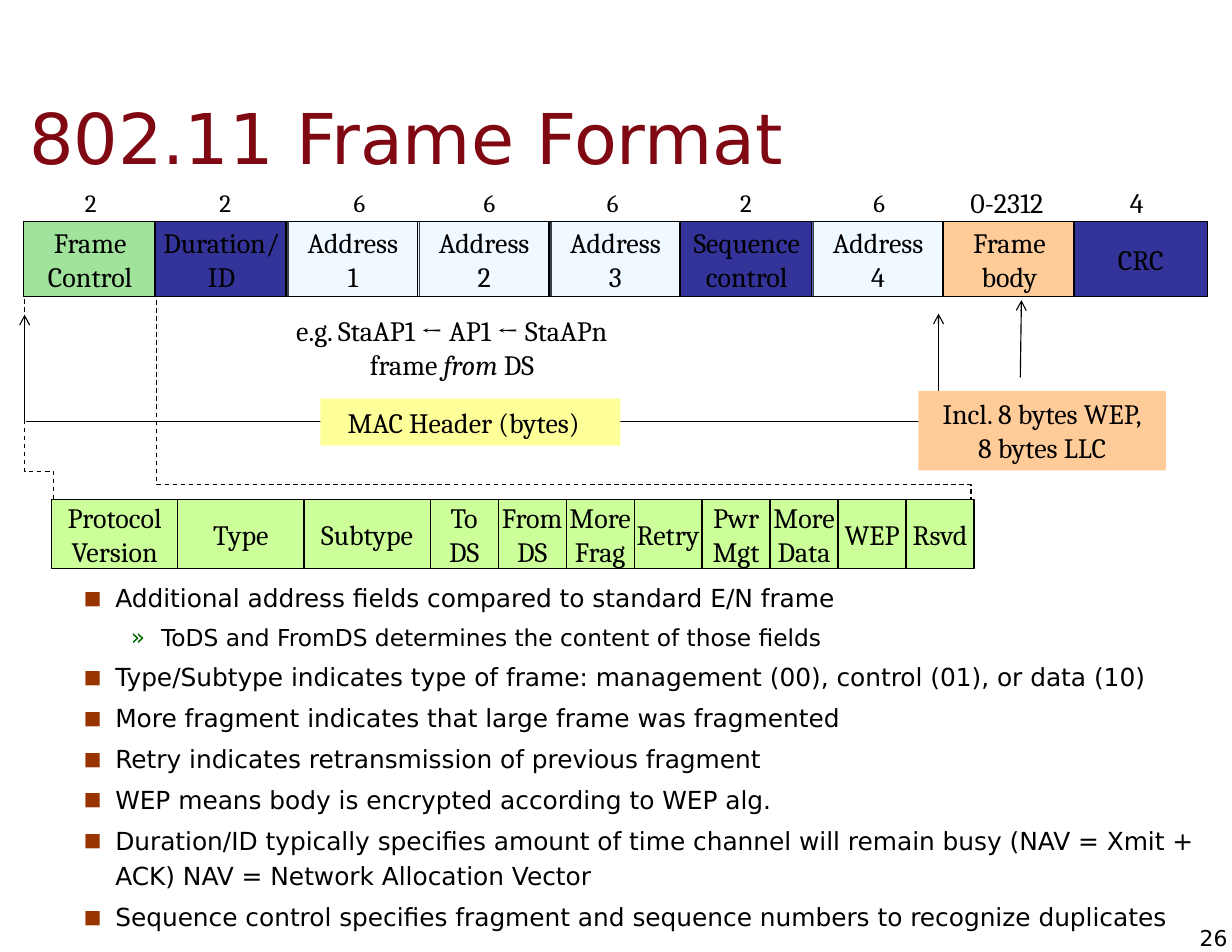
from dataclasses import dataclass
from typing import Optional

from lxml import etree
from pptx import Presentation
from pptx.dml.color import RGBColor
from pptx.enum.dml import MSO_LINE
from pptx.enum.shapes import MSO_CONNECTOR, MSO_SHAPE
from pptx.enum.text import MSO_ANCHOR, PP_ALIGN
from pptx.oxml.ns import qn
from pptx.util import Inches, Pt

DASH = MSO_LINE.DASH
STRAIGHT = MSO_CONNECTOR.STRAIGHT
RECT = MSO_SHAPE.RECTANGLE
TOP, MIDDLE = MSO_ANCHOR.TOP, MSO_ANCHOR.MIDDLE
LEFT, CENTER, RIGHT = PP_ALIGN.LEFT, PP_ALIGN.CENTER, PP_ALIGN.RIGHT

BLACK = RGBColor(0x00, 0x00, 0x00)
MAROON = RGBColor(0x7F, 0x08, 0x13)
GREEN = RGBColor(0xA1, 0xE2, 0x9C)
NAVY = RGBColor(0x33, 0x33, 0x99)
PALE_BLUE = RGBColor(0xCC, 0xEC, 0xFF)
PEACH = RGBColor(0xFF, 0xCC, 0x99)
YELLOW = RGBColor(0xFF, 0xFF, 0x99)
LIME = RGBColor(0xCC, 0xFF, 0x99)

SERIF, SANS = "Cambria", "DejaVu Sans"


@dataclass
class Field:
    label: str
    fill: RGBColor
    size: str
    size_center: float
    size_pt: int = 16
    alpha: Optional[int] = None


@dataclass
class Bullet:
    text: str
    level: int = 0


@dataclass
class BulletStyle:
    char: str
    color: str
    percent: int
    margin: float
    hanging: float
    size: int


FIELDS = [
    Field("Frame\nControl", GREEN, "2", 0.81),
    Field("Duration/\nID", NAVY, "2", 2.01),
    Field("Address\n1", PALE_BLUE, "6", 3.21, alpha=28),
    Field("Address\n2", PALE_BLUE, "6", 4.37, alpha=28),
    Field("Address\n3", PALE_BLUE, "6", 5.47, alpha=28),
    Field("Sequence\ncontrol", NAVY, "2", 6.66),
    Field("Address\n4", PALE_BLUE, "6", 7.85, alpha=28),
    Field("Frame\nbody", PEACH, "0-2312", 8.99, 18),
    Field("CRC", NAVY, "4", 10.15, 18),
]
CONTROL_WIDE = ["Protocol\nVersion", "Type", "Subtype"]
CONTROL_NARROW = ["To\nDS", "From\nDS", "More\nFrag", "Retry", "Pwr\nMgt",
                  "More\nData", "WEP", "Rsvd"]
BULLETS = [
    Bullet("Additional address fields compared to standard E/N frame"),
    Bullet("ToDS and FromDS determines the content of those fields", 1),
    Bullet("Type/Subtype indicates type of frame: management (00), control (01), or data (10)"),
    Bullet("More fragment indicates that large frame was fragmented"),
    Bullet("Retry indicates retransmission of previous fragment"),
    Bullet("WEP means body is encrypted according to WEP alg."),
    Bullet("Duration/ID typically specifies amount of time channel will remain busy "
           "(NAV = Xmit + ACK) NAV = Network Allocation Vector"),
    Bullet("Sequence control specifies fragment and sequence numbers to recognize duplicates"),
]
BULLET_STYLES = [BulletStyle("■", "993300", 75, 0.42, 0.28, 16),
                 BulletStyle("»", "006600", 100, 0.83, 0.27, 15)]


def write(sp, text: str, size: float, font: str = SERIF, color: RGBColor = BLACK,
          align=CENTER, anchor=MIDDLE, inset=(0.1, 0.05, 0.1, 0.05), wrap: bool = False):
    tf = sp.text_frame
    tf.word_wrap = wrap
    tf.vertical_anchor = anchor
    tf.margin_left, tf.margin_top, tf.margin_right, tf.margin_bottom = map(Inches, inset)
    tf.text = text
    for p in tf.paragraphs:
        p.alignment = align
        for r in p.runs:
            r.font.size = Pt(size)
            r.font.name = font
            r.font.color.rgb = color
    return tf


def add_text(slide, x: float, y: float, w: float, h: float, text: str, size: float, **style):
    sp = slide.shapes.add_textbox(Inches(x), Inches(y), Inches(w), Inches(h))
    return write(sp, text, size, **style)


def add_box(slide, x: float, y: float, w: float, h: float, text: str, fill: RGBColor,
            line: Optional[float] = None, alpha: Optional[int] = None, **style) -> None:
    sp = slide.shapes.add_shape(RECT, Inches(x), Inches(y), Inches(w), Inches(h))
    sp.shadow.inherit = False
    sp.fill.solid()
    sp.fill.fore_color.rgb = fill
    if alpha is not None:
        color = sp.fill._xPr.find(qn("a:solidFill"))[0]
        etree.SubElement(color, qn("a:alpha"), val=str(alpha * 1000))
    if line is None:
        sp.line.fill.background()
    else:
        sp.line.color.rgb = BLACK
        sp.line.width = Pt(line)
    write(sp, text, 18, **style)


def add_line(slide, x1: float, y1: float, x2: float, y2: float, arrow: bool = False) -> None:
    """Draw a thin line, with an optional arrowhead at its end."""
    cx = slide.shapes.add_connector(STRAIGHT, Inches(x1), Inches(y1), Inches(x2), Inches(y2))
    cx.line.color.rgb = BLACK
    cx.line.width = Pt(0.75)
    if arrow:
        etree.SubElement(cx.line._get_or_add_ln(), qn("a:tailEnd"), type="arrow")
    etree.SubElement(cx._element.spPr, qn("a:effectLst"))


def add_dashed_path(slide, points: list[tuple[float, float]]) -> None:
    (x, y), *rest = [(Inches(px), Inches(py)) for px, py in points]
    builder = slide.shapes.build_freeform(x, y)
    builder.add_line_segments(rest, close=False)
    sp = builder.convert_to_shape()
    sp.shadow.inherit = False
    sp.fill.background()
    sp.line.color.rgb = BLACK
    sp.line.width = Pt(0.75)
    sp.line.dash_style = DASH


def add_bullets(slide, bullets: list[Bullet]) -> None:
    tf = add_text(slide, 0.5, 5.09, 10.5, 3.38, "\n".join(b.text for b in bullets), 16,
                  font=SANS, align=LEFT, anchor=TOP, wrap=True,
                  inset=(0.11, 0.06, 0.11, 0.06))
    for i, (p, bullet) in enumerate(zip(tf.paragraphs, bullets)):
        style = BULLET_STYLES[bullet.level]
        p.level = bullet.level
        p.line_spacing = 1.2
        if i:
            p.space_before = Pt(3.2)
        pPr = p._p.get_or_add_pPr()
        pPr.set("marL", str(Inches(style.margin)))
        pPr.set("indent", str(-Inches(style.hanging)))
        color = etree.SubElement(pPr, qn("a:buClr"))
        etree.SubElement(color, qn("a:srgbClr"), val=style.color)
        etree.SubElement(pPr, qn("a:buSzPct"), val=str(style.percent * 1000))
        etree.SubElement(pPr, qn("a:buFont"), typeface=SANS)
        etree.SubElement(pPr, qn("a:buChar"), char=style.char)
        p.runs[0].font.size = Pt(style.size)


def add_frame(slide) -> None:
    for i, field in enumerate(FIELDS):
        add_box(slide, 0.21 + i * 1.1725, 1.98, 1.19, 0.67, field.label, field.fill,
                line=1, alpha=field.alpha)
        w = 0.92 if len(field.size) > 1 else 0.32
        add_text(slide, field.size_center - w / 2, 1.62, w, 0.38, field.size, field.size_pt)


def add_control_bits(slide) -> None:
    x = 0.46
    for labels, w in ((CONTROL_WIDE, 1.127), (CONTROL_NARROW, 0.607)):
        for label in labels:
            add_box(slide, x, 4.46, w, 0.62, label, LIME, line=0.75, inset=(0, 0, 0, 0))
            x += w


def main() -> None:
    prs = Presentation()
    prs.slide_width, prs.slide_height = Inches(11), Inches(8.5)
    slide = prs.slides.add_slide(prs.slide_layouts[6])

    add_text(slide, 0.15, 0.7, 10.53, 1.04, "802.11 Frame Format", 45, font=SANS,
             color=MAROON, align=LEFT, inset=(0.11, 0.06, 0.11, 0.06), wrap=True)
    add_bullets(slide, BULLETS)

    add_dashed_path(slide, [(0.22, 2.6), (0.22, 4.21), (0.48, 4.21), (0.48, 4.55)])
    add_line(slide, 4.9, 3.76, 8.38, 3.76)
    add_line(slide, 2.88, 3.76, 0.23, 3.76)
    add_frame(slide)
    add_box(slide, 2.86, 3.56, 2.68, 0.42, "MAC Header (bytes)", YELLOW,
            inset=(0.1, 0.05, 0.22, 0.05))

    tf = add_text(slide, 1.97, 2.75, 4.13, 0.71, "e.g. StaAP1 ← AP1 ← StaAPn", 18,
                  anchor=TOP, wrap=True)
    p = tf.add_paragraph()
    p.alignment = CENTER
    for text, italic in (("frame ", False), ("from", True), (" DS", False)):
        r = p.add_run()
        r.text = text
        r.font.size, r.font.name, r.font.italic = Pt(18), SERIF, italic
        r.font.color.rgb = BLACK

    add_line(slide, 0.22, 3.75, 0.22, 2.81, arrow=True)
    add_line(slide, 8.38, 3.75, 8.38, 2.8, arrow=True)
    add_box(slide, 8.2, 3.49, 2.21, 0.71, "Incl. 8 bytes WEP,\n8 bytes LLC", PEACH, anchor=TOP)
    add_line(slide, 9.11, 3.37, 9.12, 2.68, arrow=True)

    add_control_bits(slide)
    add_dashed_path(slide, [(1.4, 2.68), (1.4, 4.33), (8.67, 4.33), (8.67, 4.46)])
    add_text(slide, 10.62, 8.25, 0.34, 0.24, "26", 14, font=SANS, align=RIGHT,
             inset=(0, 0, 0, 0))
    prs.save("out.pptx")


if __name__ == "__main__":
    main()
